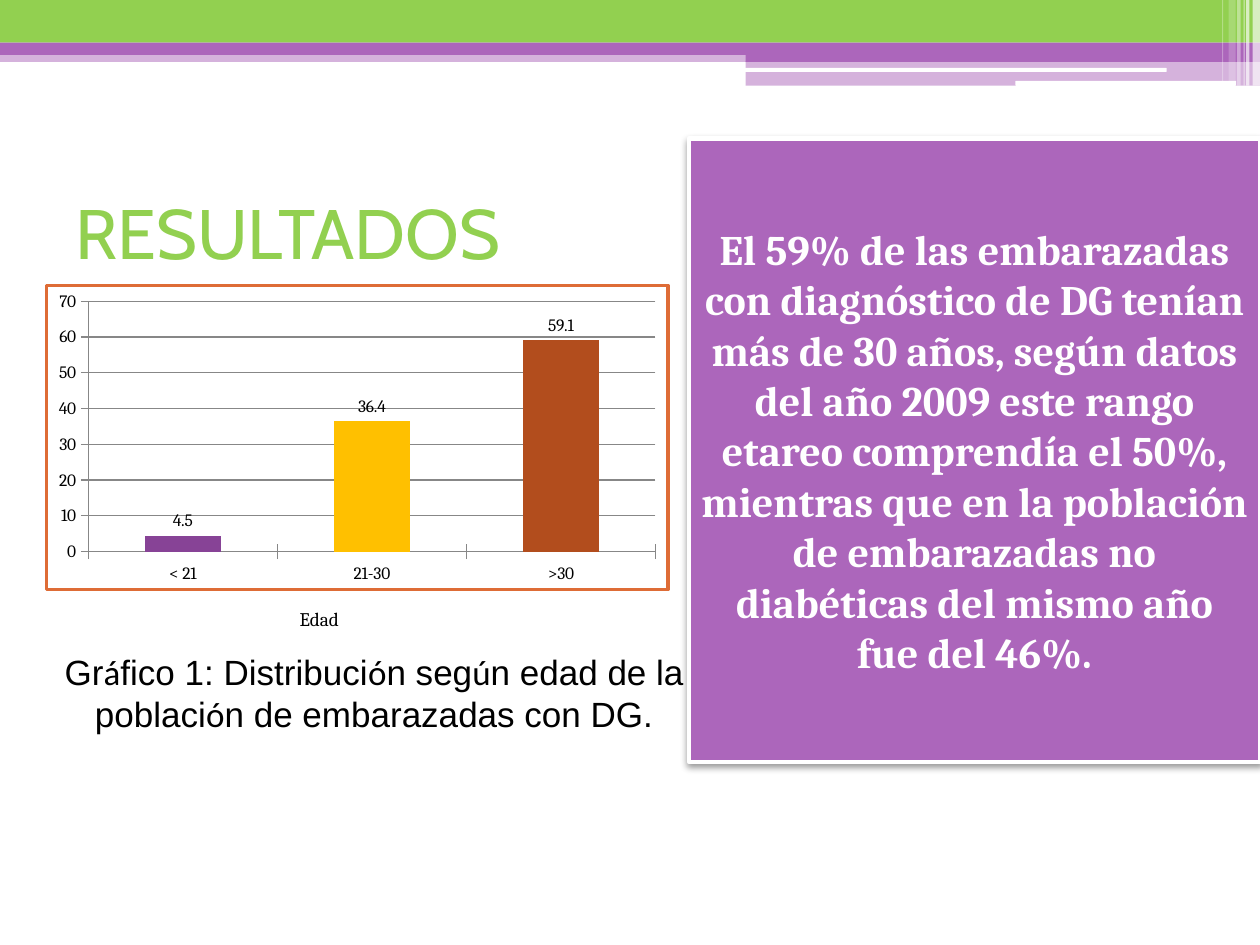
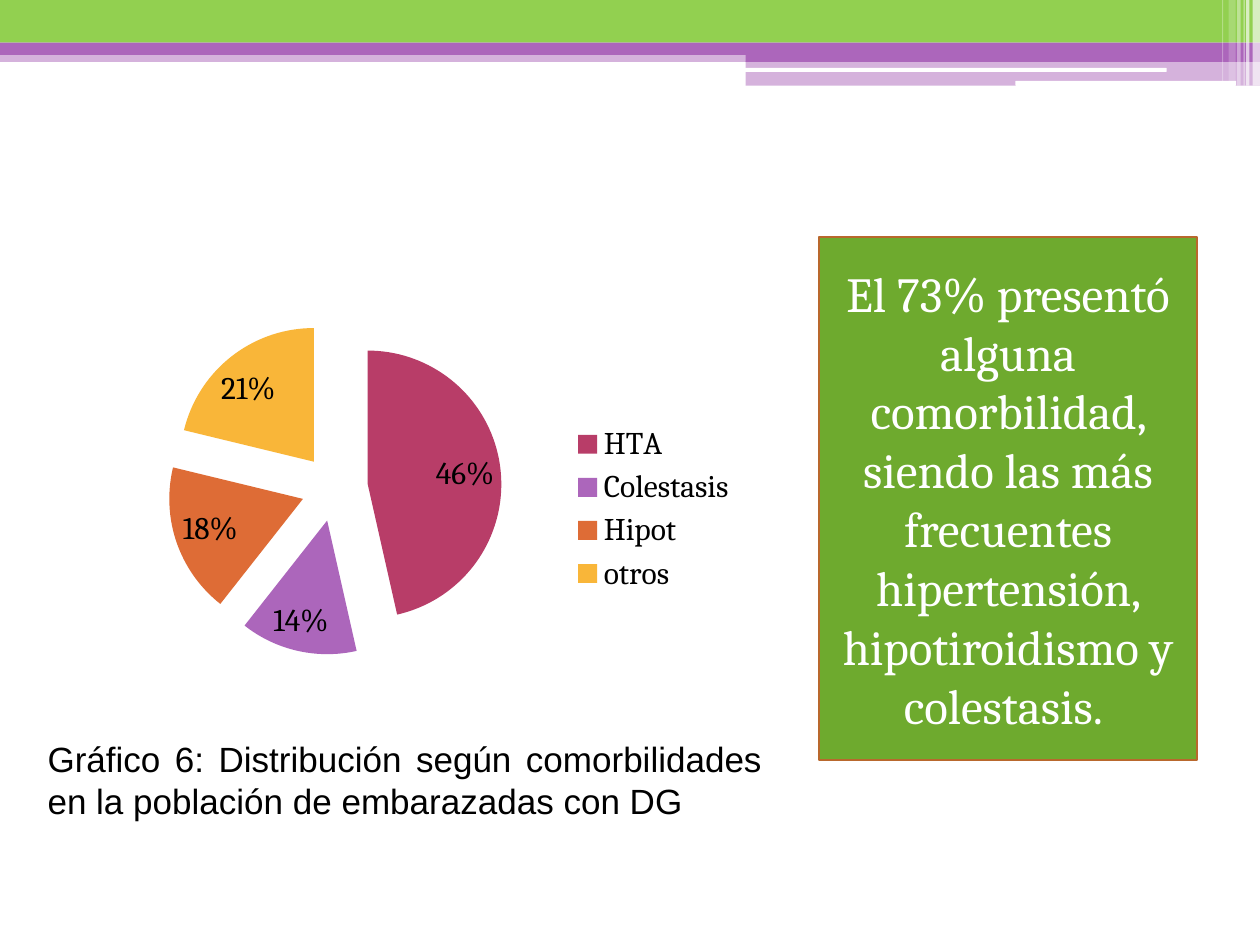
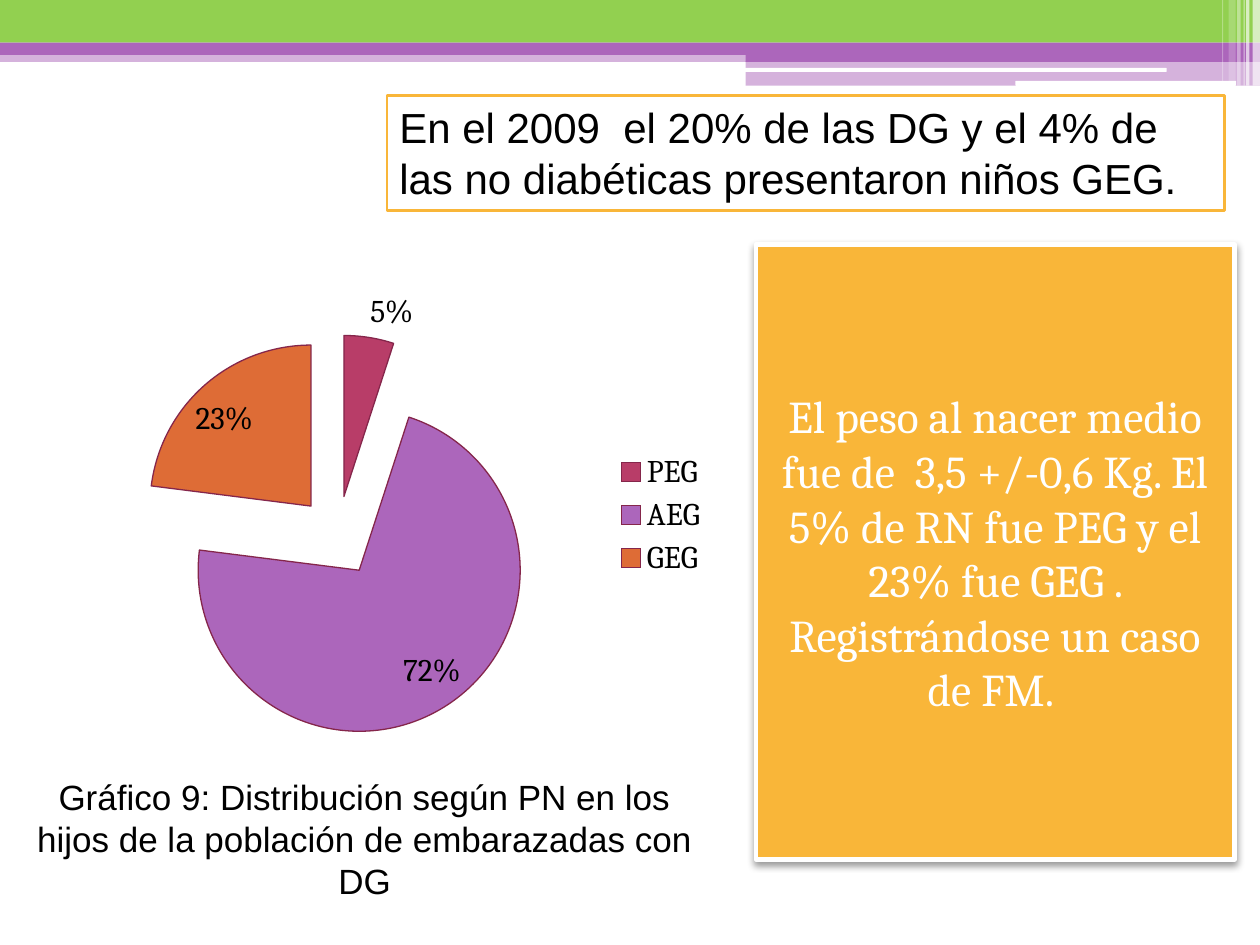
import itertools

import lxml.etree
import pptx
import pptx.chart.data
import pptx.dml.color
import pptx.enum.chart
import pptx.enum.shapes
import pptx.enum.text
import pptx.oxml.ns
import pptx.util

Cm = pptx.util.Cm
Pt = pptx.util.Pt
qn = pptx.oxml.ns.qn
Shape = pptx.enum.shapes.MSO_SHAPE
Anchor = pptx.enum.text.MSO_ANCHOR
Align = pptx.enum.text.PP_ALIGN
ChartType = pptx.enum.chart.XL_CHART_TYPE

COLORS = {
    "lime": "92D050",
    "purple": "AC66BB",
    "white": "FFFFFF",
    "black": "000000",
    "green": "6EAA2E",
    "rust": "B9682D",
    "amber": "F9B639",
    "orange": "DE6C36",
    "raspberry": "B83D68",
    "wine": "85264B",
    "violet": "874396",
    "gold": "FFC000",
    "brick": "B24D1D",
    "gray": "878787",
}

PIE_COLORS = ("raspberry", "purple", "orange", "amber")

BANDS = [
    (0, 1.02, 25.4, 0.23, "purple", 50),
    (0, 0, 25.4, 0.86, "lime", 100),
    (0, 0.86, 25.4, 0.25, "purple", 100),
    (15.03, 1, 10.37, 0.25, "purple", 100),
    (15.03, 1.23, 10.37, 0.5, "purple", 50),
    (25.25, 0, 0.15, 1.73, "white", 65),
    (25.12, 0, 0.07, 1.73, "white", 65),
    (25.07, 0, 0.02, 1.73, "white", 60),
    (24.94, 0, 0.07, 1.73, "white", 40),
    (24.77, 0, 0.14, 1.63, "white", 20),
    (24.64, 0, 0.02, 1.63, "white", 30),
]
HIGHLIGHTS = [(15.01, 1.37, 8.51, 0.08), (20.47, 1.63, 4.45, 0.1)]

CAPTION = {"font": "Arial", "size": 20}
PANEL = {"font": "Cambria", "color": "white", "align": Align.CENTER}


def rgb(name):
    return pptx.dml.color.RGBColor.from_string(COLORS[name])


def apply_formats(target, formats):
    for attribute, value in formats.items():
        setattr(target, attribute, value)


def place(part, box):
    apply_formats(part, dict(zip(("left", "top", "width", "height"), map(Cm, box))))


def set_font(font, name, size, color="black", bold=False):
    apply_formats(font, {"name": name, "size": Pt(size), "bold": bold})
    font.color.rgb = rgb(color)


def set_alpha(color_element, percent):
    lxml.etree.SubElement(color_element, qn("a:alpha"), val=str(percent * 1000))


def paint(part, fill, line=None, width=0, shadow=False):
    part.fill.solid()
    part.fill.fore_color.rgb = rgb(fill)
    if line:
        part.line.color.rgb = rgb(line)
        part.line.width = Pt(width)
    else:
        part.line.fill.background()
    part.shadow.inherit = False
    if shadow:
        effects = part.element.spPr.find(qn("a:effectLst"))
        outer = lxml.etree.SubElement(
            effects, qn("a:outerShdw"), blurRad=str(Pt(4.1)), dist=str(Pt(2)),
            dir="5400000", algn="t", rotWithShape="0")
        shade = lxml.etree.SubElement(outer, qn("a:srgbClr"), val=COLORS["black"])
        set_alpha(shade, 40)


def write(part, text, font, size, color="black", bold=False, align=Align.LEFT,
          anchor=Anchor.MIDDLE, accent_font=None):
    frame = part.text_frame
    apply_formats(frame, {
        "word_wrap": True,
        "auto_size": pptx.enum.text.MSO_AUTO_SIZE.NONE,
        "vertical_anchor": anchor,
    })
    paragraph = frame.paragraphs[0]
    paragraph.alignment = align
    for accented, letters in itertools.groupby(text, lambda letter: letter in "áóú"):
        run = paragraph.add_run()
        run.text = "".join(letters)
        name = accent_font if accented and accent_font else font
        set_font(run.font, name, size, color, bold)


def add_box(slide, box, fill, kind=Shape.RECTANGLE, **outline):
    shape = slide.shapes.add_shape(kind, *map(Cm, box))
    paint(shape, fill, **outline)
    return shape


def add_caption(slide, box, text, **formats):
    caption = slide.shapes.add_textbox(*map(Cm, box))
    write(caption, text, **CAPTION, **formats)


def set_title(slide, box, text, **formats):
    place(slide.shapes.title, box)
    write(slide.shapes.title, text, **formats)


def add_bands(slide, layout):
    bands = []
    for *box, color, opacity in BANDS:
        band = add_box(slide, box, color)
        if opacity < 100:
            set_alpha(band.element.spPr.find(".//" + qn("a:srgbClr")), opacity)
        bands.append(band)
    highlights = [add_box(slide, box, "white", Shape.ROUNDED_RECTANGLE)
                  for box in HIGHLIGHTS]
    bands[5:5] = highlights
    for number, band in enumerate(bands, 101):
        band.element.nvSpPr.cNvPr.id = number
        layout.shapes.element.append(band.element)


def add_chart(slide, kind, box, values, size, colors, line=None):
    chart_data = pptx.chart.data.CategoryChartData()
    chart_data.categories = list(values)
    chart_data.add_series("Series 1", list(values.values()))
    chart = slide.shapes.add_chart(kind, *map(Cm, box), chart_data).chart
    apply_formats(chart, {"has_title": False, "has_legend": False})
    set_font(chart.font, "Cambria", size)
    plot = chart.plots[0]
    plot.has_data_labels = True
    for index, color in zip(range(len(values)), colors):
        point = plot.series[0].points[index].format
        point.fill.solid()
        point.fill.fore_color.rgb = rgb(color)
        if line:
            point.line.color.rgb = rgb(line)
            point.line.width = Pt(0.75)
        else:
            point.line.fill.background()
    return chart


def add_pie(slide, box, values, line=None):
    chart = add_chart(slide, ChartType.PIE, box, values, 18, PIE_COLORS, line)
    chart.has_legend = True
    apply_formats(chart.legend, {
        "position": pptx.enum.chart.XL_LEGEND_POSITION.RIGHT,
        "include_in_layout": False,
    })
    plot = chart.plots[0]
    plot.vary_by_categories = True
    apply_formats(plot.data_labels, {
        "show_value": False,
        "show_percentage": True,
        "number_format": "0%",
        "number_format_is_linked": False,
        "position": pptx.enum.chart.XL_LABEL_POSITION.BEST_FIT,
    })
    first_slice = chart.element.find(".//" + qn("c:dPt"))
    explosion = lxml.etree.Element(qn("c:explosion"), val="25")
    first_slice.addprevious(explosion)


def add_columns(slide, box, values, colors):
    chart = add_chart(slide, ChartType.COLUMN_CLUSTERED, box, values, 10, colors)
    plot = chart.plots[0]
    apply_formats(plot, {"vary_by_categories": False, "gap_width": 150})
    apply_formats(plot.data_labels, {
        "show_value": True,
        "position": pptx.enum.chart.XL_LABEL_POSITION.OUTSIDE_END,
    })
    for axis in (chart.category_axis, chart.value_axis):
        axis.major_tick_mark = pptx.enum.chart.XL_TICK_MARK.CROSS
        axis.format.line.color.rgb = rgb("gray")
    apply_formats(chart.value_axis, {
        "minimum_scale": 0,
        "maximum_scale": 70,
        "major_unit": 10,
        "has_major_gridlines": True,
    })
    chart.value_axis.major_gridlines.format.line.color.rgb = rgb("gray")
    frame = lxml.etree.Element(qn("c:spPr"))
    border = lxml.etree.Element(qn("a:ln"), w=str(Pt(2)))
    for parent, color in ((frame, "white"), (border, "orange")):
        fill = lxml.etree.SubElement(parent, qn("a:solidFill"))
        lxml.etree.SubElement(fill, qn("a:srgbClr"), val=COLORS[color])
    frame.append(border)
    chart.element.find(qn("c:chart")).addnext(frame)


def build_age_slide(slide):
    set_title(slide, (1.27, 3.18, 22.86, 2.97), "RESULTADOS",
              font="Cabin", size=40, color="lime")
    add_columns(slide, (0.9, 5.72, 12.6, 6.2),
                {"< 21": 4.5, "21-30": 36.4, ">30": 59.1},
                ("violet", "gold", "brick"))
    age_label = add_box(slide, (5.79, 12.12, 2.69, 0.61), "white")
    write(age_label, "Edad", "Cambria", 11, anchor=Anchor.TOP)
    add_caption(slide, (0, 12.98, 15.09, 2.82),
                "Gráfico 1: Distribución según edad de la población de embarazadas con DG.",
                align=Align.CENTER, anchor=Anchor.TOP, accent_font="Calibri")
    finding = add_box(slide, (13.89, 2.79, 11.51, 12.57), "purple",
                      line="white", width=2.5, shadow=True)
    write(finding,
          "El 59% de las embarazadas con diagnóstico de DG tenían más de 30 años, "
          "según datos del año 2009 este rango etareo comprendía el 50%, mientras "
          "que en la población de embarazadas no diabéticas del mismo año fue del 46%.",
          size=24, bold=True, **PANEL)


def build_comorbidity_slide(slide):
    set_title(slide, (16.51, 4.78, 7.62, 10.54),
              "El 73% presentó alguna comorbilidad, siendo las más frecuentes "
              "hipertensión, hipotiroidismo y colestasis. ", size=28, **PANEL)
    paint(slide.shapes.title, "green", "rust", 1.5)
    add_pie(slide, (0.89, 6.12, 14.22, 8.28),
            {"HTA": 46, "Colestasis": 14, "Hipot": 18, "otros": 21})
    add_caption(slide, (0.71, 14.73, 14.91, 1.96),
                "Gráfico 6: Distribución según comorbilidades en la población de "
                "embarazadas con DG", align=Align.JUSTIFY)


def build_birth_weight_slide(slide):
    set_title(slide, (15.24, 4.93, 9.65, 12.4),
              "El peso al nacer medio fue de  3,5 +/-0,6 Kg. El 5% de RN fue PEG y "
              "el 23% fue GEG . Registrándose un caso de FM. ", size=26, **PANEL)
    paint(slide.shapes.title, "amber", "white", 2.5, shadow=True)
    add_pie(slide, (1.3, 5.54, 13.23, 9.68),
            {"PEG": 5, "AEG": 72, "GEG": 23}, line="wine")
    add_caption(slide, (0.2, 15.49, 14.3, 2.82),
                "Gráfico 9: Distribución según PN en los hijos de la población de "
                "embarazadas con DG", align=Align.CENTER)
    comparison = add_box(slide, (7.8, 1.93, 16.89, 2.31), "white",
                         line="amber", width=1.5)
    write(comparison,
          "En el 2009  el 20% de las DG y el 4% de las no diabéticas presentaron "
          "niños GEG.", "Arial", 24, anchor=Anchor.TOP)


def main():
    deck = pptx.Presentation()
    apply_formats(deck, {"slide_width": Cm(25.4), "slide_height": Cm(19.05)})
    layout = deck.slide_layouts[5]
    builders = (build_age_slide, build_comorbidity_slide, build_birth_weight_slide)
    slides = [deck.slides.add_slide(layout) for _ in builders]
    add_bands(slides[0], layout)
    for build, slide in zip(builders, slides):
        build(slide)
    deck.save("out.pptx")


if __name__ == "__main__":
    main()
